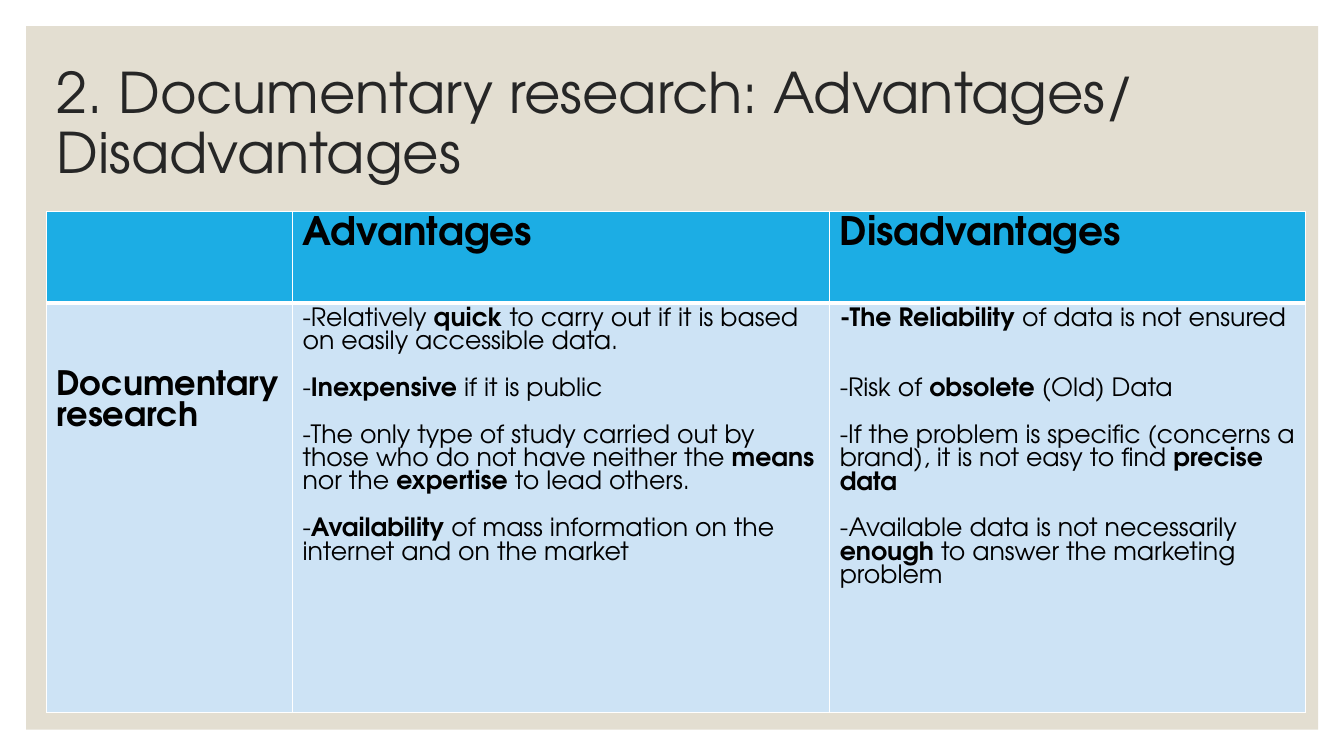
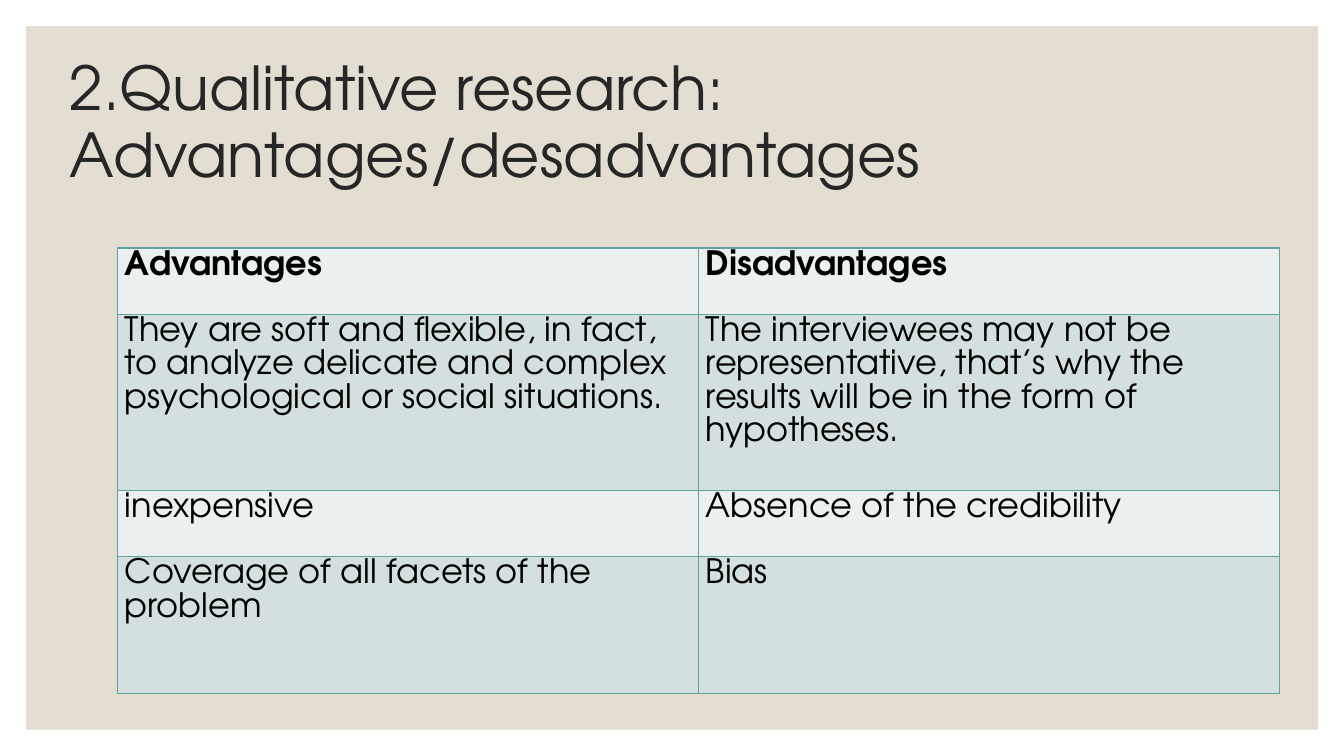
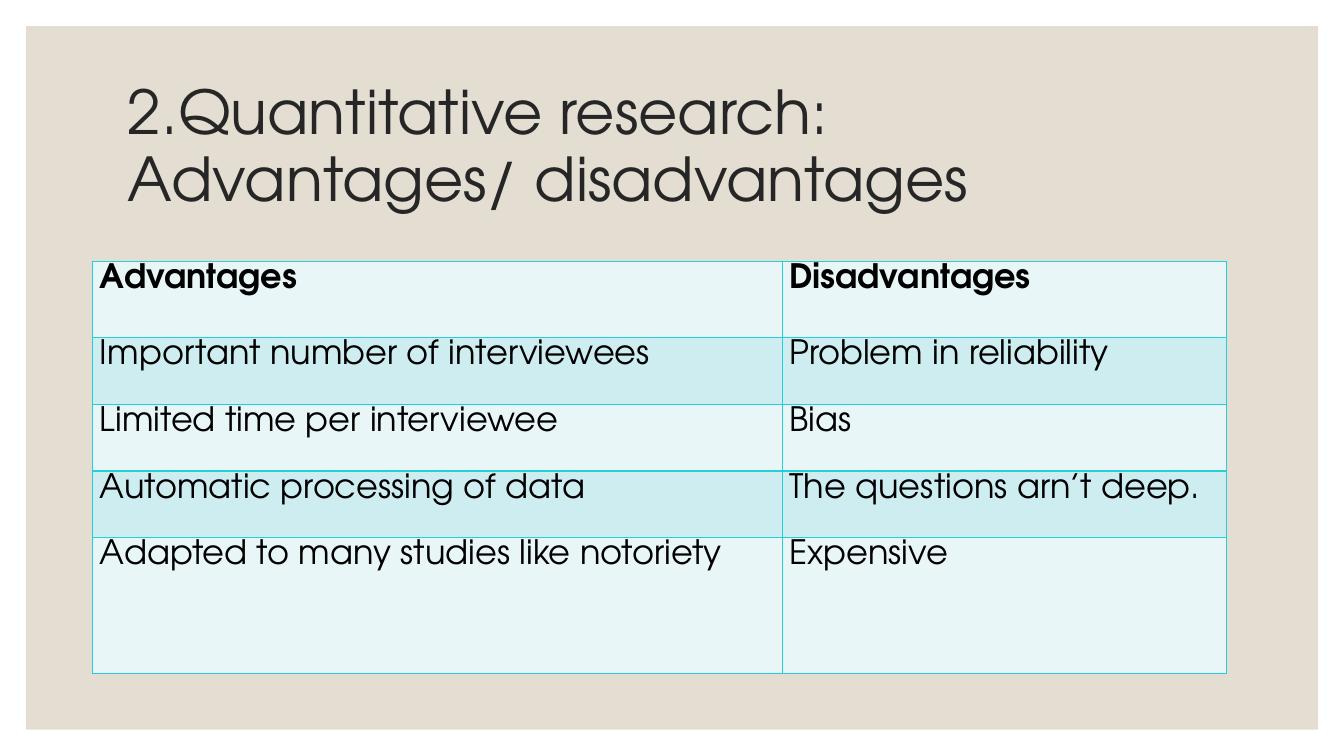
from lxml import etree
from pptx import Presentation
from pptx.dml.color import RGBColor
from pptx.enum import shapes, text
from pptx.oxml import ns
from pptx.util import Cm, Pt

FONT = "TeX Gyre Adventor"
WHITE, BAND, TITLE, INK = "FFFFFF", "E3DED1", "262626", "000000"


def rgb(value):
    return RGBColor.from_string(value)


def set_attrs(obj, values):
    for name, value in values.items():
        setattr(obj, name, value)


def add_run(p, words, size, color=INK, bold=False):
    r = p.add_run()
    r.text = words
    set_attrs(r.font, dict(name=FONT, size=Pt(size), bold=bold))
    r.font.color.rgb = rgb(color)


# Shared parts
def add_band(prs, slide):
    """Draw the beige panel and move it to the master, behind everything."""
    sp = slide.shapes.add_shape(shapes.MSO_SHAPE.RECTANGLE,
                                Cm(0.66), Cm(0.66), Cm(32.56), Cm(17.73))
    sp.shadow.inherit = False
    sp.fill.solid()
    sp.fill.fore_color.rgb = rgb(BAND)
    sp.line.fill.background()
    prs.slide_master.shapes._spTree.insert(2, sp._element)


def add_title(slide, words, box, size, pitch):
    sp = slide.shapes.title
    set_attrs(sp, dict(zip(("left", "top", "width", "height"), map(Cm, box))))
    tf = sp.text_frame
    set_attrs(tf, dict(word_wrap=True, auto_size=text.MSO_AUTO_SIZE.NONE,
                       vertical_anchor=text.MSO_ANCHOR.MIDDLE))
    p = tf.paragraphs[0]
    set_attrs(p, dict(alignment=text.PP_ALIGN.LEFT, line_spacing=Pt(pitch)))
    add_run(p, words, size, TITLE)


# Table parts
def set_borders(cell, color, **widths):
    """Give the cell its four edges, 1 pt unless a width is named."""
    tcPr = cell._tc.get_or_add_tcPr()
    for i, side in enumerate("LRTB"):
        ln = etree.Element(ns.qn("a:ln" + side), w=str(Pt(widths.get(side, 1))))
        fill = etree.SubElement(ln, ns.qn("a:solidFill"))
        etree.SubElement(fill, ns.qn("a:srgbClr"), val=color)
        tcPr.insert(i, ln)


def fill_cell(cell, paragraphs, size, pitch, bold=False):
    """Write (gap in lines, text) pairs; *stars* switch bold on and off."""
    for i, (gap, words) in enumerate(paragraphs):
        tf = cell.text_frame
        p = tf.add_paragraph() if i else tf.paragraphs[0]
        set_attrs(p, dict(line_spacing=Pt(pitch), space_before=Pt(gap * pitch)))
        for j, part in enumerate(words.split("*")):
            if part:
                add_run(p, part, size, bold=bold or j % 2 == 1)


def add_grid(slide, left, top, cols, rows):
    table = slide.shapes.add_table(len(rows), len(cols), Cm(left), Cm(top),
                                   Cm(sum(cols)), Cm(sum(rows))).table
    set_attrs(table, dict(first_row=False, horz_banding=False))
    for col, width in zip(table.columns, cols):
        col.width = Cm(width)
    for row, height in zip(table.rows, rows):
        row.height = Cm(height)
    return table


def paint_cell(cell, color):
    cell.fill.solid()
    cell.fill.fore_color.rgb = rgb(color)


def add_summary_table(slide, left, top, cols, rows, heads, label, columns):
    """Blue header row above one row of long cells."""
    table = add_grid(slide, left, top, cols, rows)
    for c, head in enumerate(heads):
        cell = table.cell(0, c)
        paint_cell(cell, "1CADE4")
        set_borders(cell, WHITE, B=3)
        if head:
            fill_cell(cell, [(0, head)], 28, 26, bold=True)
        body = table.cell(1, c)
        paint_cell(body, "CDE3F5")
        set_borders(body, WHITE, T=3)
        if c:
            fill_cell(body, columns[c - 1], 18, 16.7)
    side = table.cell(1, 0)
    side.margin_top = Cm(1.7)
    fill_cell(side, [(0, label)], 24, 22.2, bold=True)


def add_banded_table(slide, left, top, cols, rows, entries, bands, line):
    """Two-tone rows with a bold first row."""
    table = add_grid(slide, left, top, cols, rows)
    margins = dict(margin_left=Cm(0.18), margin_right=Cm(0.18),
                   margin_top=0, margin_bottom=0)
    for r, entry in enumerate(entries):
        for c, words in enumerate(entry):
            cell = table.cell(r, c)
            set_attrs(cell, margins)
            paint_cell(cell, bands[r % 2])
            set_borders(cell, line)
            fill_cell(cell, [(0, words)], 24, 23.8, bold=r == 0)


# Wording
HEADS = ("Advantages", "Disadvantages")
DOCUMENTARY = [
    [(0, "-Relatively *quick* to carry out if it is based on easily accessible data."),
     (1, "-*Inexpensive* if it is public"),
     (1, "-The only type of study carried out by those who do not have neither the "
         "*means* nor the *expertise* to lead others."),
     (1, "-*Availability* of mass information on the internet and on the market")],
    [(0, "*-The Reliability *of data is not ensured"),
     (2, "-Risk of *obsolete* (Old) Data"),
     (1, "-If the problem is specific (concerns a brand), it is not easy to find "
         "*precise data*"),
     (1, "-Available data is not necessarily *enough* to answer the marketing problem")],
]
QUALITATIVE = [
    HEADS,
    ("They are soft and flexible, in fact, to analyze delicate and complex "
     "psychological or social situations.",
     "The interviewees may not be representative, that’s why the results will be "
     "in the form of hypotheses."),
    ("inexpensive", "Absence of the credibility"),
    ("Coverage of all facets of the problem", "Bias"),
]
QUANTITATIVE = [
    HEADS,
    ("Important number of interviewees", "Problem in reliability"),
    ("Limited time per interviewee", "Bias"),
    ("Automatic processing of data", "The questions arn’t deep."),
    ("Adapted to many studies like notoriety", "Expensive"),
]


def main():
    prs = Presentation()
    set_attrs(prs, dict(slide_width=Cm(33.87), slide_height=Cm(19.05)))
    documentary, qualitative, quantitative = (
        prs.slides.add_slide(prs.slide_layouts[5]) for _ in range(3))
    add_band(prs, documentary)

    # Documentary research
    add_title(documentary, "2. Documentary research: Advantages/ Disadvantages",
              (1.17, 1.65, 31.72, 2.97), 40, 43)
    add_summary_table(documentary, 1.17, 5.33, (6.2, 13.54, 11.99), (2.3, 10.33),
                      ("", *HEADS), "Documentary research", DOCUMENTARY)

    # Qualitative research
    add_title(qualitative, "2.Qualitative research: Advantages/desadvantages",
              (1.5, 1.19, 29.79, 3.81), 43.2, 47.9)
    add_banded_table(qualitative, 2.97, 6.25, (14.64, 14.64),
                     (1.68, 4.42, 1.68, 3.44), QUALITATIVE,
                     ("EAF0F0", "D3E0DF"), "62A39F")

    # Quantitative research
    add_title(quantitative, "2.Quantitative research: Advantages/ disadvantages",
              (2.97, 1.78, 27.94, 3.81), 43.2, 47.9)
    add_banded_table(quantitative, 2.34, 6.58, (17.37, 11.2),
                     (1.93, 1.68, 1.68, 1.68, 3.43), QUANTITATIVE,
                     ("E8F6F8", "CDEDF0"), "27CED7")

    prs.save("out.pptx")


if __name__ == "__main__":
    main()
